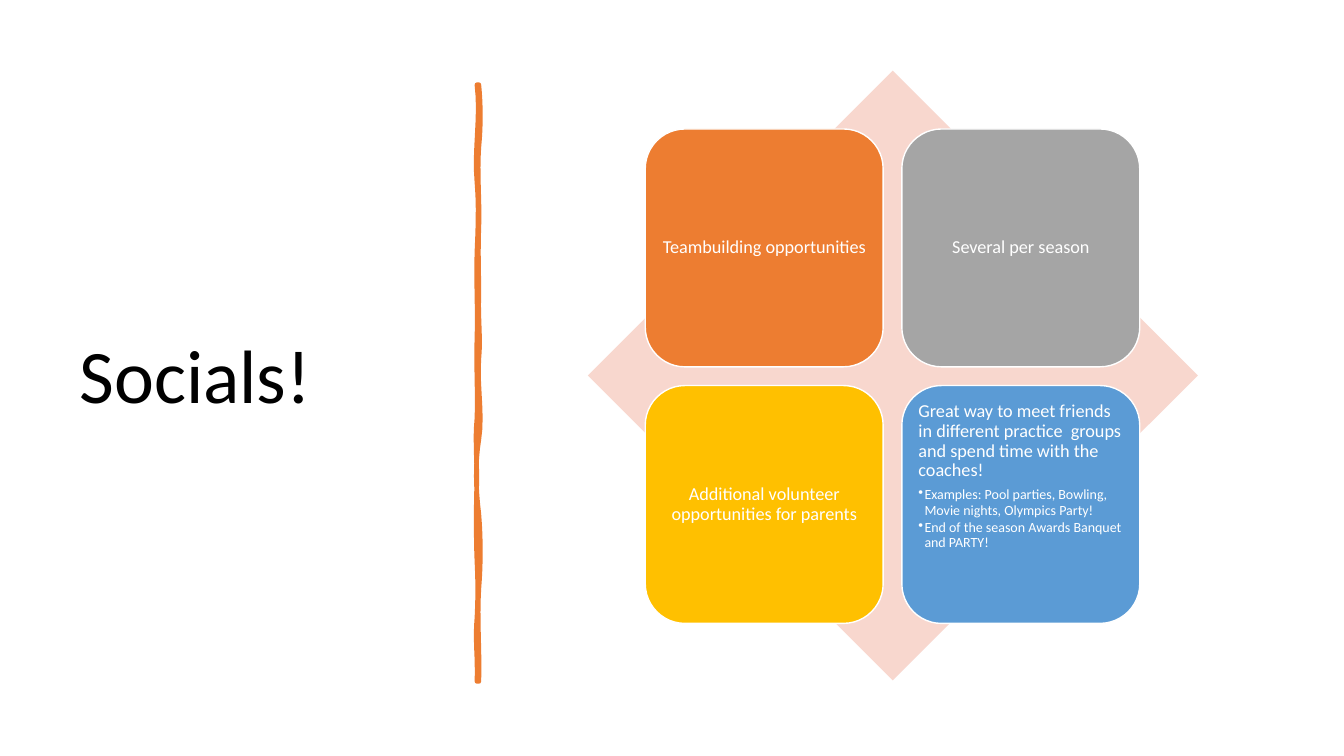
from lxml.etree import SubElement
from pptx import Presentation
from pptx.dml.color import RGBColor
from pptx.enum.shapes import MSO_SHAPE
from pptx.enum.text import MSO_ANCHOR, PP_ALIGN
from pptx.oxml.ns import qn
from pptx.util import Inches, Pt

TITLE = "Socials!"
CARDS = [
    ("ED7D31", "Teambuilding opportunities", []),
    ("A5A5A5", "Several per season", []),
    ("FFC000", "Additional volunteer opportunities for parents", []),
    ("5B9BD5",
     "Great way to meet friends in different practice  groups and spend time with the coaches!",
     ["Examples: Pool parties, Bowling, Movie nights, Olympics Party!",
      "End of the season Awards Banquet and PARTY!"]),
]
ORANGE, PINK, WHITE, BLACK = "ED7D31", "F8D7CE", "FFFFFF", "000000"
FONT = "Calibri"
CARD_LEFT, CARD_TOP, CARD_SIZE, CARD_STEP = 6.4, 1.28, 2.36, 2.545

# Each bend is its end height and the sideways pull at its start and end.
STROKE_TOP, STROKE_BOTTOM = 0.84, 6.76
RIGHT_EDGE = (4.75, STROKE_TOP, [
    (1.46, 0.02, 0.02), (2.26, -0.02, 0.01), (2.94, -0.01, 0),
    (3.56, -0.01, 0.02), (4.36, -0.02, 0.04), (5.1, -0.04, -0.03),
    (5.84, 0.02, 0.02), (STROKE_BOTTOM, -0.02, 0.01)])
LEFT_EDGE = (4.73, STROKE_BOTTOM, [
    (6.13, 0.01, -0.02), (5.57, 0.01, 0.01), (4.77, -0.01, -0.01),
    (4.15, 0, -0.02), (3.35, 0.01, -0.01), (2.5, 0.01, -0.01),
    (1.81, 0.01, 0.02), (STROKE_TOP, -0.03, 0.04)])
STEPS = 8


def color(value):
    return RGBColor.from_string(value)


def paint(shape, fill, line=None, width=1):
    shape.shadow.inherit = False
    shape.fill.solid()
    shape.fill.fore_color.rgb = color(fill)
    if line:
        shape.line.color.rgb = color(line)
        shape.line.width = Pt(width)
    else:
        shape.line.fill.background()


def write(para, text, size, ink, align, after=0):
    para.text = text
    para.alignment = align
    para.line_spacing = 0.9
    para.space_after = Pt(after)
    for span in para.runs:
        span.font.name = FONT
        span.font.size = Pt(size)
        span.font.color.rgb = color(ink)


def add_bullet(para):
    properties = para._p.get_or_add_pPr()
    properties.set("marL", str(Inches(0.06)))
    properties.set("indent", str(-Inches(0.06)))
    SubElement(properties, qn("a:buChar")).set("char", "•")


def trace(edge):
    base, start, bends = edge
    points = [(base, start)]
    for end, pull_start, pull_end in bends:
        for step in range(1, STEPS + 1):
            t = step / STEPS
            shift = 3 * t * (1 - t) * ((1 - t) * pull_start + t * pull_end)
            points.append((base + shift, start + t * (end - start)))
        start = end
    return points


def add_stroke(slide):
    points = [(Inches(x), Inches(y)) for x, y in trace(RIGHT_EDGE) + trace(LEFT_EDGE)]
    builder = slide.shapes.build_freeform(*points[0])
    builder.add_line_segments(points[1:], close=True)
    stroke = builder.convert_to_shape()
    paint(stroke, ORANGE, ORANGE, 3.25)
    SubElement(stroke.line._get_or_add_ln(), qn("a:round"))


def add_card(slide, index, fill, heading, bullets):
    row, column = divmod(index, 2)
    card = slide.shapes.add_shape(
        MSO_SHAPE.ROUNDED_RECTANGLE,
        Inches(CARD_LEFT + column * CARD_STEP), Inches(CARD_TOP + row * CARD_STEP),
        Inches(CARD_SIZE), Inches(CARD_SIZE))
    paint(card, fill, WHITE)
    frame = card.text_frame
    frame.word_wrap = True
    frame.margin_left = frame.margin_right = Inches(0.05)
    frame.margin_top = frame.margin_bottom = Inches(0.05)
    frame.vertical_anchor = MSO_ANCHOR.TOP if bullets else MSO_ANCHOR.MIDDLE
    align = PP_ALIGN.LEFT if bullets else PP_ALIGN.CENTER
    write(frame.paragraphs[0], heading, 13, WHITE, align, 5)
    for bullet in bullets:
        para = frame.add_paragraph()
        para.level = 1
        write(para, bullet, 10, WHITE, align, 1.5)
        add_bullet(para)


def main():
    deck = Presentation()
    deck.slide_width, deck.slide_height = Inches(13.33), Inches(7.5)
    slide = deck.slides.add_slide(deck.slide_layouts[5])

    title = slide.shapes.title
    title.left, title.top = Inches(0.69), Inches(0.7)
    title.width, title.height = Inches(3.74), Inches(6.11)
    title.text_frame.vertical_anchor = MSO_ANCHOR.MIDDLE
    write(title.text_frame.paragraphs[0], TITLE, 54, BLACK, PP_ALIGN.LEFT)

    add_stroke(slide)
    diamond = slide.shapes.add_shape(
        MSO_SHAPE.DIAMOND, Inches(5.83), Inches(0.7), Inches(6.05), Inches(6.05))
    paint(diamond, PINK)
    for index, card in enumerate(CARDS):
        add_card(slide, index, *card)
    deck.save("out.pptx")


if __name__ == "__main__":
    main()
